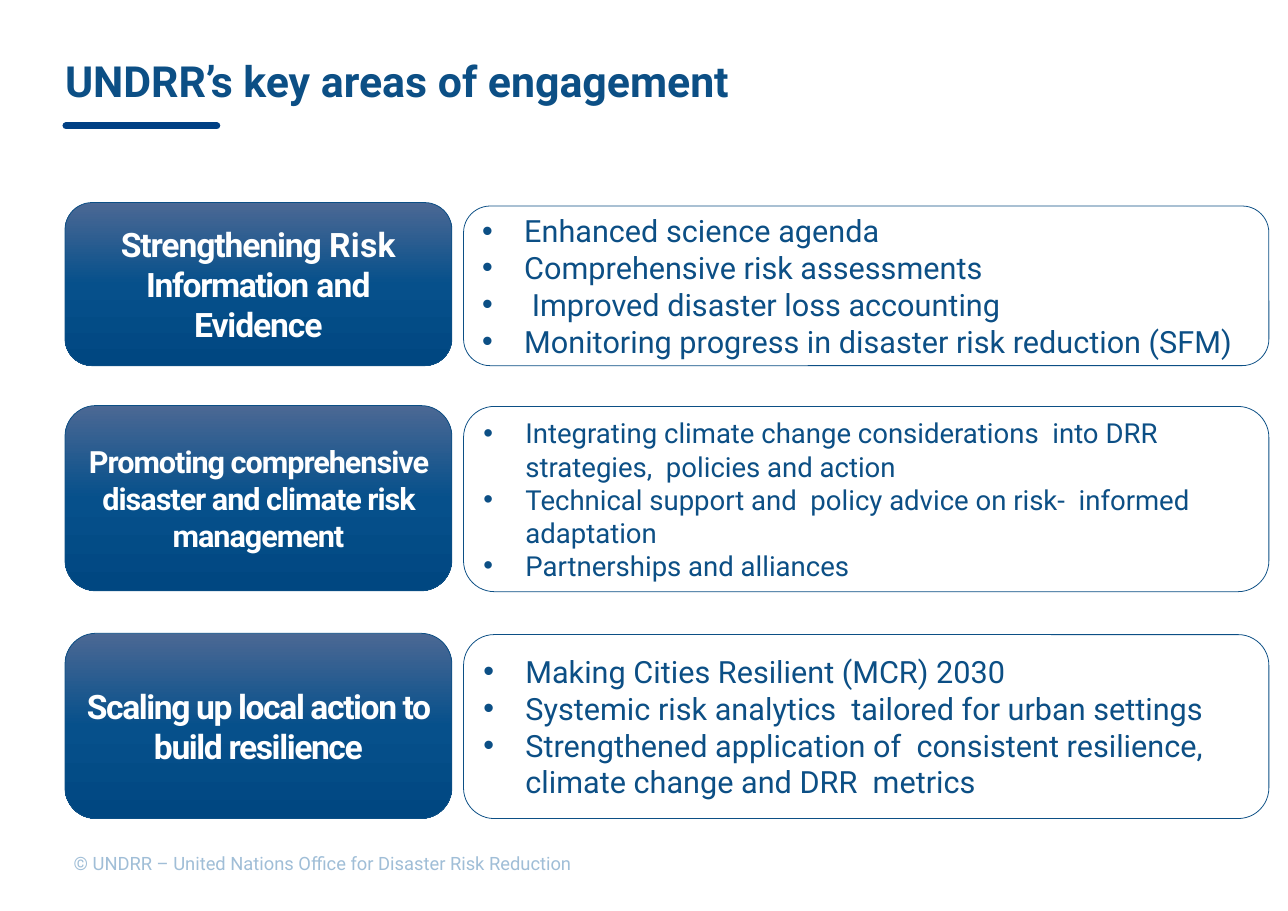
"""Build the slide on key areas of engagement."""
from copy import deepcopy
from dataclasses import dataclass

from lxml.etree import SubElement
from pptx import Presentation
from pptx.dml.color import RGBColor
from pptx.enum.shapes import MSO_CONNECTOR, MSO_SHAPE
from pptx.enum.text import MSO_ANCHOR, MSO_AUTO_SIZE, PP_ALIGN
from pptx.oxml.ns import qn
from pptx.shapes.autoshape import Shape
from pptx.slide import Slide
from pptx.text.text import _Run
from pptx.util import Cm, Pt

FONT = "Roboto"
BLUE = RGBColor(0x0C, 0x4F, 0x85)
RULE_BLUE = RGBColor(0x00, 0x40, 0x84)
PALE_BLUE = RGBColor(0xA0, 0xBE, 0xD7)
WHITE = RGBColor(0xFF, 0xFF, 0xFF)
GRADIENT = (
    (0, RGBColor(0x4B, 0x68, 0x94)),
    (0.5, RGBColor(0x06, 0x50, 0x8B)),
    (1, RGBColor(0x00, 0x47, 0x81)),
)
HEADING_LEFT, HEADING_WIDTH = 1.5, 8.92
DETAIL_LEFT, DETAIL_WIDTH = 10.69, 18.57
BULLET_INDENT = Cm(0.97)


@dataclass(frozen=True)
class Span:
    """A piece of heading text with its letter spacing in points."""
    text: str
    spacing: float


@dataclass(frozen=True)
class Area:
    """One row: a heading box and a box of bullet points."""
    heading: tuple[Span, ...]
    heading_size: int
    heading_top: float
    heading_height: float
    points: tuple[str, ...]
    point_size: int
    detail_top: float
    detail_height: float


AREAS = (
    Area(
        (Span("Strengthening ", -0.7), Span("Risk ", 0.2), Span("Information ", -0.9),
         Span("and", -0.5), Span(" Evidence", -0.7)),
        22, 4.67, 3.76,
        ("Enhanced science agenda",
         "Comprehensive risk assessments",
         " Improved disaster loss accounting",
         "Monitoring progress in disaster risk reduction (SFM)"),
        20, 4.75, 3.68,
    ),
    Area(
        (Span("Promoting comprehensive disaster and climate risk management", -0.7),),
        20, 9.35, 4.27,
        ("Integrating climate change considerations  into DRR strategies,  policies and action",
         "Technical support and  policy advice on risk-  informed adaptation",
         "Partnerships and alliances"),
        18, 9.37, 4.27,
    ),
    Area(
        (Span("Scaling up local action to build resilience", -0.9),),
        22, 14.6, 4.27,
        ("Making Cities Resilient (MCR) 2030",
         "Systemic risk analytics  tailored for urban settings",
         "Strengthened application of  consistent resilience,  climate change and DRR  metrics"),
        20, 14.63, 4.24,
    ),
)


def format_run(run: _Run, size: int, color: RGBColor, bold: bool = False) -> None:
    """Set the font of a run."""
    run.font.name = FONT
    run.font.size = Pt(size)
    run.font.bold = bold
    run.font.color.rgb = color


def add_text(slide: Slide, text: str, left: float, top: float, width: float,
             height: float, size: int, color: RGBColor, bold: bool = False) -> Shape:
    """Add a wrapped one-line text box."""
    box = slide.shapes.add_textbox(Cm(left), Cm(top), Cm(width), Cm(height))
    box.text_frame.word_wrap = True
    box.text_frame.text = text
    format_run(box.text_frame.paragraphs[0].runs[0], size, color, bold)
    return box


def add_title(slide: Slide) -> None:
    """Add the title and the rule below it."""
    title = add_text(slide, "UNDRR’s key areas of engagement",
                     HEADING_LEFT, 0.51, 26.72, 2.67, 28, BLUE, True)
    frame = title.text_frame
    frame.vertical_anchor = MSO_ANCHOR.MIDDLE
    frame.margin_left = 0
    frame.margin_right = Cm(0.28)
    frame.margin_top = frame.margin_bottom = Cm(0.15)
    rule = slide.shapes.add_connector(
        MSO_CONNECTOR.STRAIGHT, Cm(1.52), Cm(2.9), Cm(5), Cm(2.9))
    rule.line.color.rgb = RULE_BLUE
    rule.line.width = Pt(4.5)
    rule.line._get_or_add_ln().set("cap", "rnd")
    SubElement(rule._element.spPr, qn("a:effectLst"))


def add_rounded_box(slide: Slide, left: float, top: float, width: float,
                    height: float) -> Shape:
    """Add a thinly outlined rounded box with middle-anchored text."""
    box = slide.shapes.add_shape(
        MSO_SHAPE.ROUNDED_RECTANGLE, Cm(left), Cm(top), Cm(width), Cm(height))
    box.shadow.inherit = False
    box.line.color.rgb = BLUE
    box.line.width = Pt(0.5)
    box.text_frame.word_wrap = True
    box.text_frame.vertical_anchor = MSO_ANCHOR.MIDDLE
    return box


def fill_gradient(shape: Shape) -> None:
    """Fill a shape with the three-stop gradient from top to bottom."""
    shape.fill.gradient()
    shape.fill.gradient_angle = 270
    stop_list = shape._element.spPr.find(qn("a:gradFill")).find(qn("a:gsLst"))
    stop_list.append(deepcopy(stop_list[0]))
    for stop, (position, color) in zip(shape.fill.gradient_stops, GRADIENT):
        stop.position = position
        stop.color.rgb = color


def add_heading(slide: Slide, area: Area) -> None:
    """Add the heading box of an area."""
    box = add_rounded_box(slide, HEADING_LEFT, area.heading_top,
                          HEADING_WIDTH, area.heading_height)
    fill_gradient(box)
    paragraph = box.text_frame.paragraphs[0]
    paragraph.alignment = PP_ALIGN.CENTER
    for span in area.heading:
        run = paragraph.add_run()
        run.text = span.text
        format_run(run, area.heading_size, WHITE, True)
        run._r.get_or_add_rPr().set("spc", str(round(span.spacing * 100)))


def add_details(slide: Slide, area: Area) -> None:
    """Add the box of bullet points of an area."""
    box = add_rounded_box(slide, DETAIL_LEFT, area.detail_top,
                          DETAIL_WIDTH, area.detail_height)
    box.fill.solid()
    box.fill.fore_color.rgb = WHITE
    box.text_frame.text = "\n".join(area.points)
    for paragraph in box.text_frame.paragraphs:
        paragraph.alignment = PP_ALIGN.LEFT
        properties = paragraph._p.get_or_add_pPr()
        properties.set("marL", str(BULLET_INDENT))
        properties.set("indent", str(-BULLET_INDENT))
        SubElement(properties, qn("a:buFont"), typeface="Arial")
        SubElement(properties, qn("a:buChar"), char="•")
        format_run(paragraph.runs[0], area.point_size, BLUE)


def main() -> None:
    """Create and save the presentation."""
    presentation = Presentation()
    presentation.slide_width = Cm(29.7)
    presentation.slide_height = Cm(21)
    slide = presentation.slides.add_slide(presentation.slide_layouts[6])
    add_title(slide)
    for area in AREAS:
        add_heading(slide, area)
        add_details(slide, area)
    footer = add_text(slide, "© UNDRR – United Nations Office for Disaster Risk Reduction",
                      1.45, 19.51, 26.16, 0.76, 12, PALE_BLUE)
    footer.text_frame.auto_size = MSO_AUTO_SIZE.SHAPE_TO_FIT_TEXT
    presentation.save("out.pptx")


if __name__ == "__main__":
    main()
